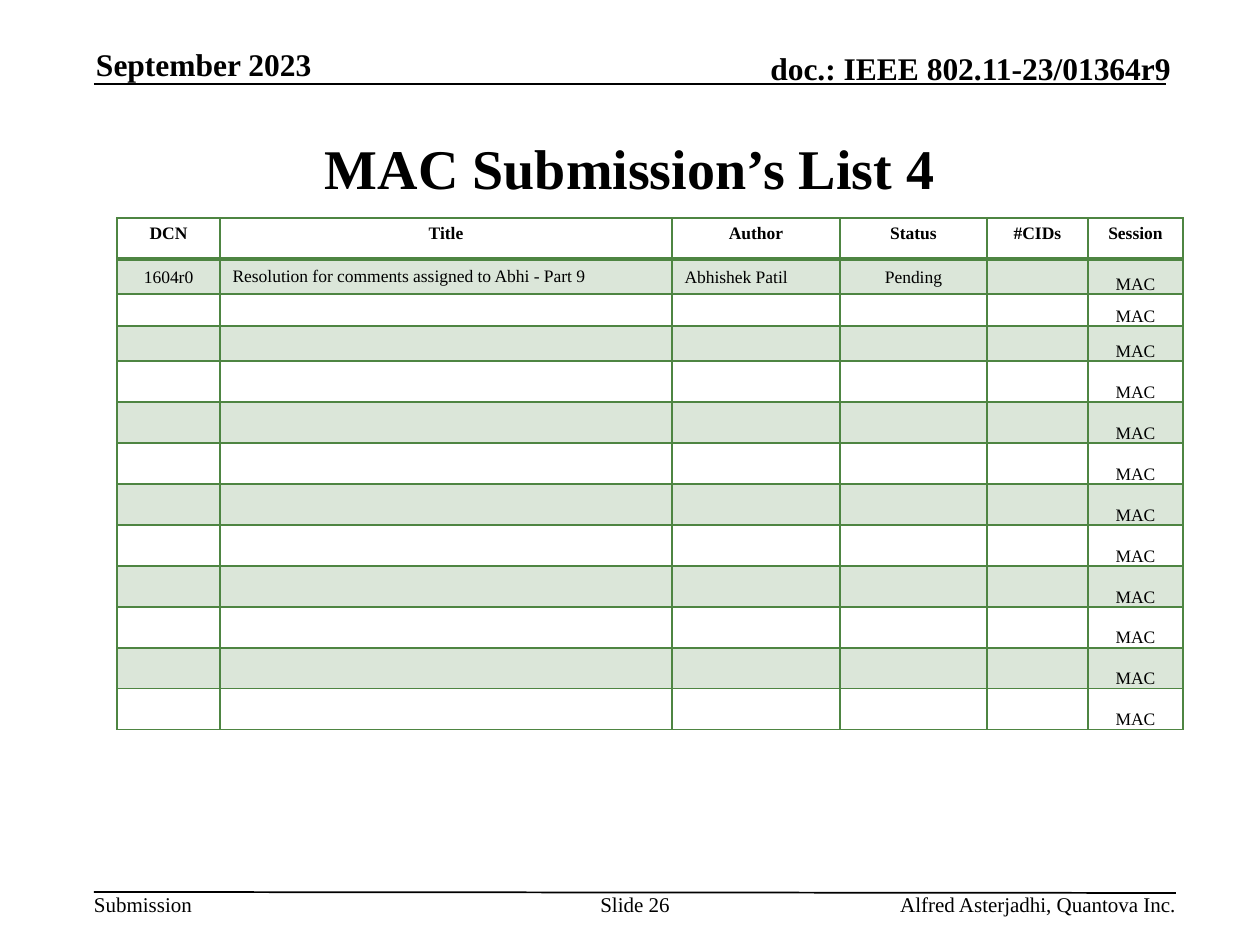
"""Build the MAC submissions list slide."""
from lxml import etree
from pptx import Presentation, util as u
from pptx.dml.color import RGBColor
from pptx.enum import shapes, text
from pptx.oxml import ns

BLACK = RGBColor(0, 0, 0)
GREEN = RGBColor(0x4E, 0x85, 0x42)
LEFT, MID, RIGHT = text.PP_ALIGN.LEFT, text.PP_ALIGN.CENTER, text.PP_ALIGN.RIGHT
TOP, CENTER, BOTTOM = (text.MSO_ANCHOR.TOP, text.MSO_ANCHOR.MIDDLE,
                       text.MSO_ANCHOR.BOTTOM)


def px(n):
    return u.Emu(round(n * 914400 / 126))


def sub(node, tag, **attrs):
    return etree.SubElement(node, ns.qn(tag), **attrs)


class Deck:
    def __init__(self):
        self.face = "Times New Roman"
        self.prs = Presentation()
        self.prs.slide_width, self.prs.slide_height = px(1260), px(945)
        self.slide = self.prs.slides.add_slide(self.prs.slide_layouts[6])

    def words(self, para, words, size, bold=False, align=LEFT):
        para.text = words
        para.alignment = align
        font = para.font
        font.name, font.size, font.bold = self.face, u.Pt(size), bold
        font.color.rgb = BLACK

    def label(self, box, words, size, bold=False, align=LEFT, anchor=TOP):
        frame = self.slide.shapes.add_textbox(*map(px, box)).text_frame
        frame.margin_left = frame.margin_right = 0
        frame.margin_top = frame.margin_bottom = 0
        frame.word_wrap = True
        frame.vertical_anchor = anchor
        self.words(frame.paragraphs[0], words, size, bold, align)

    def rule(self, *ends):
        line = self.slide.shapes.add_connector(
            shapes.MSO_CONNECTOR.STRAIGHT, *map(px, ends))
        line.line.color.rgb = BLACK
        line.line.width = u.Pt(1)
        sub(line._element.spPr, "a:effectLst")

    def edges(self, cell, head):
        props = cell._tc.get_or_add_tcPr()
        for side in "LRTB":
            width = u.Pt(2 if head and side == "B" else 1)
            line = sub(props, f"a:ln{side}", w=str(int(width)))
            sub(sub(line, "a:solidFill"), "a:srgbClr", val=str(GREEN))

    def tint(self, cell, shade):
        if not shade:
            cell.fill.background()
            return
        cell.fill.solid()
        cell.fill.fore_color.rgb = GREEN
        color = cell._tc.tcPr.find(ns.qn("a:solidFill"))[0]
        sub(color, "a:alpha", val="20000")

    def cell(self, cell, words, row, align, anchor, inset):
        self.edges(cell, row == 0)
        self.tint(cell, row % 2)
        cell.vertical_anchor = anchor
        if not inset:
            cell.margin_left = cell.margin_right = 0
            cell.margin_top = cell.margin_bottom = 0
        para = cell.text_frame.paragraphs[0]
        self.words(para, words, 10, row == 0, align)
        if not words:
            sub(para._p, "a:endParaRPr", sz="1000")

    def table(self, left, top, cols, rows, data):
        grid = self.slide.shapes.add_table(
            len(rows), len(cols), px(left), px(top),
            px(sum(cols)), px(sum(rows))).table
        grid.first_row = grid.horz_banding = False
        for col, width in zip(grid.columns, cols):
            col.width = px(width)
        for row, height in zip(grid.rows, rows):
            row.height = px(height)
        last = len(cols) - 1
        for r, line in enumerate(data):
            for c, words in enumerate(line):
                align = LEFT if r and c in (1, 2) else MID
                anchor = TOP if r == 0 else CENTER if c == 1 else BOTTOM
                inset = r == 0 or (words and c < last)
                self.cell(grid.cell(r, c), words, r, align, anchor, inset)


def main():
    deck = Deck()
    deck.rule(94, 84, 1166, 84)
    deck.rule(94, 892, 1176, 893)
    deck.label((96, 45, 258, 38), "September 2023", 18, True, anchor=BOTTOM)
    deck.label((689, 49, 482, 38), "doc.: IEEE 802.11-23/01364r9", 18, True,
               RIGHT, BOTTOM)
    deck.label((94, 94, 1072, 146), "MAC Submission’s List 4", 32, True,
               MID, CENTER)
    deck.label((94, 892, 98, 25), "Submission", 12)
    deck.label((598, 892, 74, 50), "Slide 26", 12, align=MID)
    deck.label((738, 892, 438, 25), "Alfred Asterjadhi, Quantova Inc.", 12,
               align=RIGHT)
    data = [
        ["DCN", "Title", "Author", "Status", "#CIDs", "Session"],
        ["1604r0", "Resolution for comments assigned to Abhi - Part 9",
         "Abhishek Patil", "Pending", "", "MAC"],
    ] + [[""] * 5 + ["MAC"]] * 11
    deck.table(117, 218, [103, 452, 168, 147, 101, 95],
               [41, 35, 32, 35] + [41] * 9, data)
    deck.prs.save("out.pptx")


if __name__ == "__main__":
    main()
